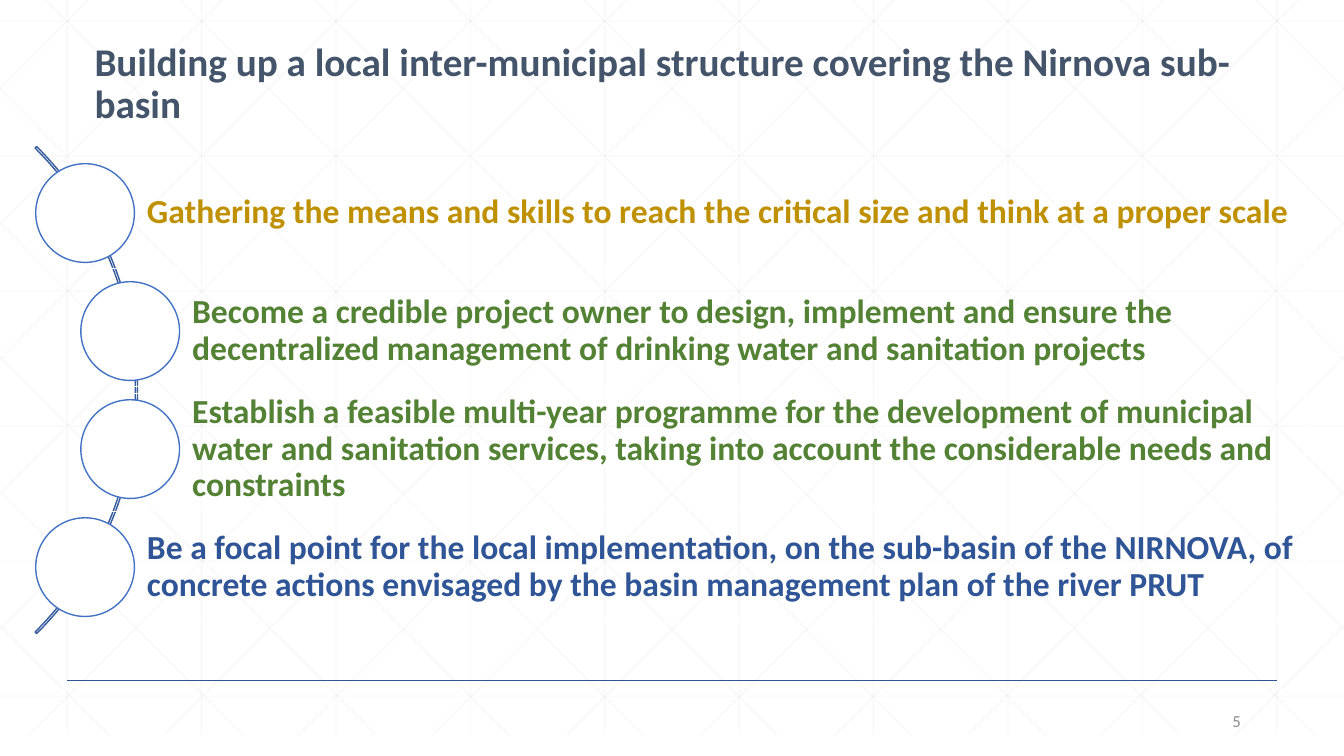
from lxml import etree
from pptx import Presentation, util as u
from pptx.dml.color import RGBColor
from pptx.enum import shapes, text
from pptx.oxml.ns import qn

PX = 9525
W, H = 1280, 720
COLORS = {
    "grid": "D9D9D9", "rule": "2F5597", "title": "44546A", "number": "8C8C8C",
    "arc": "365B9D", "ring": "4472C4", "white": "FFFFFF",
    "gold": "BF9000", "green": "548235", "blue": "2F5597",
}
TITLE = "Building up a local inter-municipal structure covering the Nirnova sub-basin"
GOALS = [
    (34, "gold", "Gathering the means and skills to reach the critical size and think at a proper scale"),
    (77, "green", "Become a credible project owner to design, implement and ensure the "
                  "decentralized management of drinking water and sanitation projects"),
    (77, "green", "Establish a feasible multi-year programme for the development of municipal water "
                  "and sanitation services, taking into account the considerable needs and constraints"),
    (34, "blue", "Be a focal point for the local implementation, on the sub-basin of the NIRNOVA, of "
                 "concrete actions envisaged by the basin management plan of the river PRUT"),
]


def px(*values):
    """Turn pixel lengths into EMU."""
    return [u.Emu(round(v * PX)) for v in values]


def rgb(name):
    """Look up a named colour."""
    return RGBColor.from_string(COLORS[name])


def add_line(s, x1, y1, x2, y2, color, width, opacity=None):
    """Draw a straight line without shadow."""
    line = s.shapes.add_connector(shapes.MSO_CONNECTOR.STRAIGHT, *px(x1, y1, x2, y2))
    line.line.color.rgb = rgb(color)
    line.line.width = u.Pt(width)
    props = line._element.spPr
    etree.SubElement(props, qn("a:effectLst"))
    if opacity:
        clr = props.find(".//" + qn("a:srgbClr"))
        etree.SubElement(clr, qn("a:alpha")).set("val", str(opacity * 1000))


def add_outline(s, kind, box, line, fill=None):
    """Add a preset shape with a thin outline."""
    sp = s.shapes.add_shape(kind, *px(*box))
    sp.shadow.inherit = False
    sp.line.color.rgb = rgb(line)
    sp.line.width = u.Pt(1)
    if fill:
        sp.fill.solid()
        sp.fill.fore_color.rgb = rgb(fill)
    else:
        sp.fill.background()
    return sp


def write(sp, words, size, color, bold=True, insets=(10, 5, 10, 5), **para):
    """Fill a shape with one formatted paragraph."""
    tf = sp.text_frame
    left, top, right, bottom = px(*insets)
    frame = {"word_wrap": True, "auto_size": text.MSO_AUTO_SIZE.NONE,
             "vertical_anchor": text.MSO_ANCHOR.MIDDLE, "margin_left": left,
             "margin_top": top, "margin_right": right, "margin_bottom": bottom}
    p = tf.paragraphs[0]
    r = p.add_run()
    r.text = words
    font = {"name": "Calibri", "size": u.Pt(size), "bold": bold}
    para = {"alignment": text.PP_ALIGN.LEFT, **para}
    for target, values in ((tf, frame), (p, para), (r.font, font)):
        for key, value in values.items():
            setattr(target, key, value)
    r.font.color.rgb = rgb(color)


def add_grid(s, top, bottom):
    """Draw the faint lattice of straight and mirrored diagonal lines."""
    slope = 720 / 716
    lines = [(x, top, x, bottom) for x in range(64, W, 128)]
    lines += [(0, 20 + 128.6 * i, W, 20 + 128.6 * i) for i in range(6)]
    falling = []
    for x in range(24, W, 128):
        end = min(x + 716, W)
        falling.append((x, top, end, top + (end - x) * slope))
    for x in range(612, 100, -127):
        falling.append((x, bottom, 0, bottom - x * slope))
    lines += falling + [(W - x1, y1, W - x2, y2) for x1, y1, x2, y2 in falling]
    for ends in lines:
        add_line(s, *ends, "grid", 0.5, 25)


def add_title(s, box):
    """Place the title placeholder above the lattice."""
    sp = s.shapes.title
    sp.left, sp.top, sp.width, sp.height = px(*box)
    s.shapes._spTree.append(sp._element)
    write(sp, TITLE, 28, "title", line_spacing=0.9)


def add_footer(s, box):
    """Draw the bottom rule and the slide number."""
    x, y, w, h = box
    add_line(s, x, y, x + w, y, "rule", 1)
    sp = s.shapes.add_textbox(*px(x + w - 312, y + h - 38, 288, 38))
    write(sp, "5", 12, "number", bold=False, alignment=text.PP_ALIGN.RIGHT)


def add_goals(s, box):
    """Draw the arc with one circle and text for each goal."""
    left, top, width, height = box
    circle, bar, pitch, arc = 94, 106, 112.4, 656
    kind = shapes.MSO_SHAPE
    sp = add_outline(s, kind.BLOCK_ARC, (left - 559, top + (height - arc) / 2, arc, arc), "arc")
    for i, value in enumerate((189, 27, 0.0032)):
        sp.adjustments[i] = value
    first = top + (height - 3 * pitch - circle) / 2
    for i, (x, color, words) in enumerate(GOALS):
        y = first + i * pitch
        start = x + circle / 2
        sp = add_outline(s, kind.RECTANGLE,
                         (start, y + (circle - bar) / 2, left + width - start, bar), "white")
        write(sp, words, 24, color, insets=(59, 0, 7, 0), line_spacing=0.9)
        add_outline(s, kind.OVAL, (x, y, circle, circle), "ring", "white")


def main():
    """Build and save the slide."""
    prs = Presentation()
    prs.slide_width, prs.slide_height = px(W, H)
    s = prs.slides.add_slide(prs.slide_layouts[5])
    add_grid(s, -20, 700)
    add_title(s, (80, 21, 1162, 119))
    add_footer(s, (64, 648, 1152, 57))
    add_goals(s, (34, 140, 1209, 463))
    prs.save("out.pptx")


if __name__ == "__main__":
    main()
